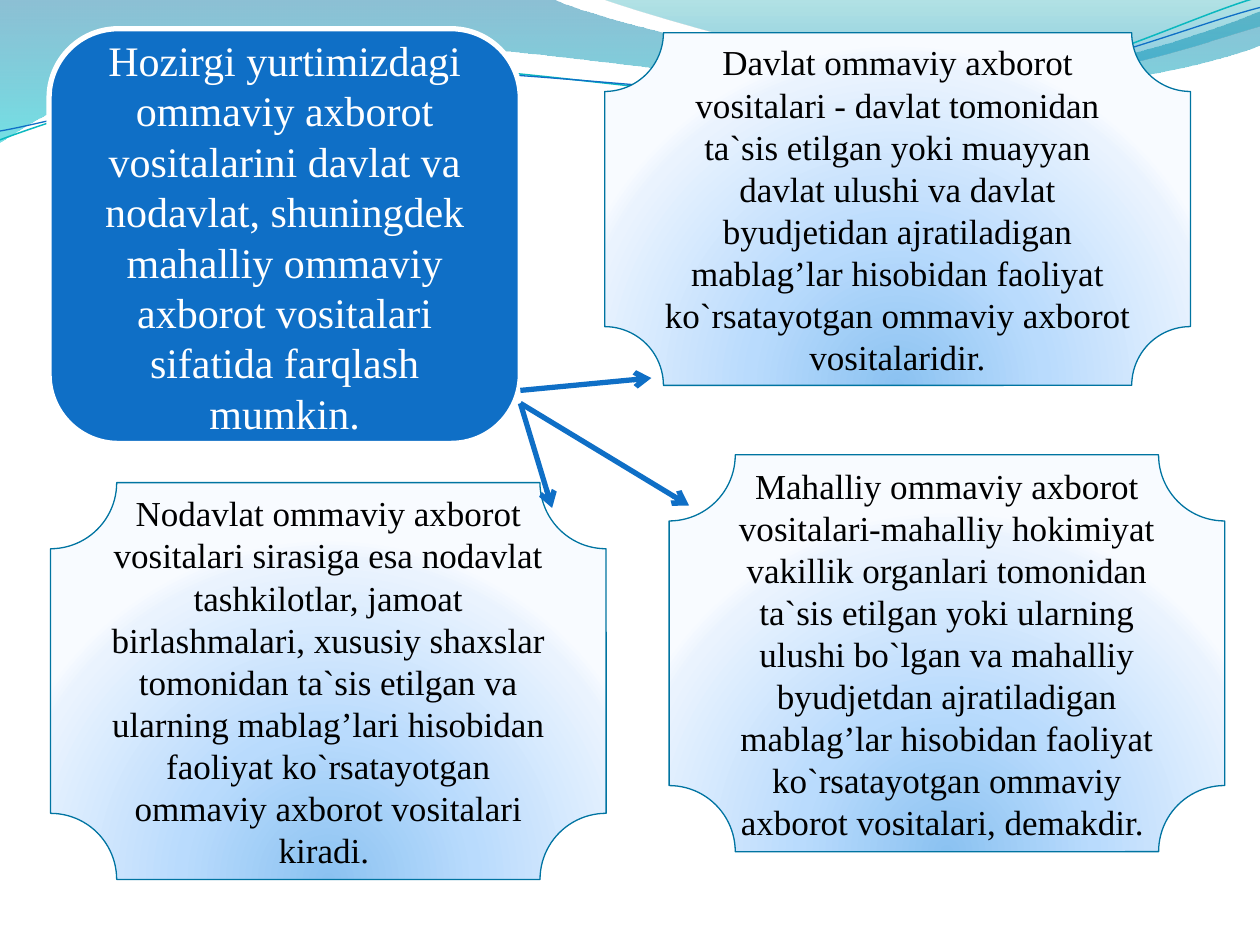
from collections import namedtuple
from math import cos, radians, sin

from lxml.etree import SubElement
from pptx import Presentation
from pptx.dml.color import RGBColor
from pptx.enum.shapes import MSO_CONNECTOR, MSO_SHAPE
from pptx.enum.text import MSO_ANCHOR, PP_ALIGN
from pptx.oxml.ns import qn
from pptx.util import Cm, Pt

Box = namedtuple("Box", "left top width height")

COLOURS = {
    "blue": "0F6FC6", "teal": "0AB8BF", "edge": "0074A1",
    "white": "FFFFFF", "black": "000000",
}
WAVE_FILLS = {
    "deep": [(0, "0074A1", 45), (100, "00C6CF", 55)],
    "light": [(0, "00A1A9", 30), (80, "008BBF", 45)],
}
PLAQUE_FILL = [(0, "8BC2F1", 100), (43, "B9DBFD", 100),
               (93, "EAF3FE", 100), (100, "F8FBFF", 100)]
GLOW = {"l": "50000", "t": "130000", "r": "50000", "b": "-30000"}
TILT = -2.7

WAVES = [
    ("deep", [(0, 0), (4.4, 0), (4.76, .17, 6.64, .63, 7.58, .63),
              (8.53, .63, 9.58, .26, 10, .09), (10, .36),
              (9.83, .44, 8.7, .76, 7.46, .75), (6.22, .75, 3.82, .28, 2.57, .34),
              (1.29, .36, .46, .83, 0, 1.13)]),
    ("light", [(4.79, 0), (5.09, .11, 6.82, .62, 7.69, .65),
               (8.56, .69, 9.61, .32, 10, .21), (10, 0)]),
]
STRANDS = [
    ("teal", .85, (4.99, .58),
     [(0, 1.11), (.48, .93, 1.58, .57, 2.77, .52),
      (3.95, .47, 5.93, .89, 7.13, .8), (8.33, .71, 9.38, .15, 9.98, -.02)]),
    ("blue", .75, (5, .59),
     [(0, 1.04), (.47, .96, 1.64, .61, 2.83, .56),
      (4.03, .51, 5.97, .84, 7.17, .75), (8.36, .67, 9.41, .21, 10, .06)]),
]

TOPIC = ("Hozirgi yurtimizdagi ommaviy axborot vositalarini davlat va nodavlat, "
         "shuningdek mahalliy ommaviy axborot vositalari sifatida farqlash mumkin.")
PLAQUES = [
    (Box(Cm(12.19), Cm(.66), Cm(11.81), Cm(7.11)),
     "Davlat ommaviy axborot vositalari - davlat tomonidan ta`sis etilgan yoki muayyan "
     "davlat ulushi va davlat byudjetidan ajratiladigan mablag’lar hisobidan faoliyat "
     "ko`rsatayotgan ommaviy axborot vositalaridir."),
    (Box(Cm(13.49), Cm(9.17), Cm(11.2), Cm(8)),
     "Mahalliy ommaviy axborot vositalari-mahalliy hokimiyat vakillik organlari tomonidan "
     "ta`sis etilgan yoki ularning ulushi bo`lgan va mahalliy byudjetdan ajratiladigan "
     "mablag’lar hisobidan faoliyat ko`rsatayotgan ommaviy axborot vositalari, demakdir. "),
    (Box(Cm(1.02), Cm(9.73), Cm(11.2), Cm(8)),
     "Nodavlat ommaviy axborot vositalari sirasiga esa nodavlat tashkilotlar, jamoat "
     "birlashmalari, xususiy shaxslar tomonidan ta`sis etilgan va ularning mablag’lari "
     "hisobidan faoliyat ko`rsatayotgan ommaviy axborot vositalari kiradi. "),
]
ARROWS = [(8.13, 13.89, 10.19), (7.87, 13.13, 7.62), (8.13, 11.13, 10.24)]


def colour(name):
    """Return the named colour."""
    return RGBColor.from_string(COLOURS[name])


def set_all(target, values):
    """Set each attribute of target from a dict of format values."""
    for name, value in values.items():
        setattr(target, name, value)


def set_line(line, name, points):
    """Give a line its colour and its width in points."""
    line.color.rgb = colour(name)
    line.width = Pt(points)


def fill_gradient(shape, stops, glow=None):
    """Fill a shape downwards, or outwards from a glow rectangle."""
    shape.fill.background()
    properties = shape.element.spPr
    empty = properties.find(qn("a:noFill"))
    gradient = properties.makeelement(qn("a:gradFill"), {"rotWithShape": "1"})
    properties.replace(empty, gradient)
    stop_list = SubElement(gradient, qn("a:gsLst"))
    for position, value, opacity in stops:
        stop = SubElement(stop_list, qn("a:gs"), pos=str(position * 1000))
        tint = SubElement(stop, qn("a:srgbClr"), val=value)
        SubElement(tint, qn("a:alpha"), val=str(opacity * 1000))
    if glow:
        circle = SubElement(gradient, qn("a:path"), {"path": "circle"})
        SubElement(circle, qn("a:fillToRect"), glow)
    else:
        SubElement(gradient, qn("a:lin"), ang="5400000", scaled="1")


def turn(point, centre, angle):
    """Turn a point clockwise about a centre by an angle in degrees."""
    x, y = point[0] - centre[0], point[1] - centre[1]
    c, s = cos(radians(angle)), sin(radians(angle))
    return centre[0] + x * c - y * s, centre[1] + x * s + y * c


def add_outline(page, box, segments, close, centre=(0, 0), rotation=0):
    """Draw lines and cubic curves given in tenths of the box width."""
    unit = box.width / 10
    pairs = [segment[i:i + 2] for segment in segments for i in range(0, len(segment), 2)]
    points = [(round(box.left + x * unit), round(box.top + y * unit))
              for x, y in (turn(pair, centre, -rotation) for pair in pairs)]
    builder = page.shapes.build_freeform(*points[0])
    builder.add_line_segments(points[1:], close=close)
    shape = builder.convert_to_shape()
    steps = iter(list(shape.element.iter(qn("a:lnTo"))))
    for segment in segments[1:]:
        step = next(steps)
        if len(segment) == 6:
            curve = step.makeelement(qn("a:cubicBezTo"), {})
            step.addprevious(curve)
            for corner in (step, next(steps), next(steps)):
                curve.append(corner[0])
                corner.getparent().remove(corner)
    shape.rotation = rotation
    shape.shadow.inherit = False
    return shape


def add_waves(page, box):
    """Draw the wavy band along the top of the box."""
    for name, segments in WAVES:
        wave = add_outline(page, box, segments, True)
        fill_gradient(wave, WAVE_FILLS[name])
        wave.line.fill.background()
    for name, width, centre, segments in STRANDS:
        strand = add_outline(page, box, segments, False, centre, TILT)
        strand.fill.background()
        set_line(strand.line, name, width)


def add_panel(page, box, kind, text, size, ink):
    """Add a preset shape with centred text."""
    panel = page.shapes.add_shape(kind, *box)
    panel.shadow.inherit = False
    set_all(panel.text_frame, {"word_wrap": True, "vertical_anchor": MSO_ANCHOR.MIDDLE})
    para = panel.text_frame.paragraphs[0]
    para.alignment = PP_ALIGN.CENTER
    span = para.add_run()
    span.text = text
    set_all(span.font, {"name": "Times New Roman", "size": Pt(size)})
    span.font.color.rgb = colour(ink)
    return panel


def add_topic(page, box):
    """Add the blue panel that states the topic."""
    topic = add_panel(page, box, MSO_SHAPE.ROUNDED_RECTANGLE, TOPIC, 24, "white")
    topic.fill.solid()
    topic.fill.fore_color.rgb = colour("blue")
    set_line(topic.line, "white", 3)


def add_plaque(page, box, text):
    """Add a glowing plaque that describes one kind of media."""
    plaque = add_panel(page, box, MSO_SHAPE.PLAQUE, text, 20, "black")
    fill_gradient(plaque, PLAQUE_FILL, GLOW)
    set_line(plaque.line, "edge", .75)


def add_arrow(page, start, end):
    """Add an arrow from start to end."""
    arrow = page.shapes.add_connector(MSO_CONNECTOR.STRAIGHT, *start, *end)
    set_line(arrow.line, "blue", 3)
    properties = arrow.element.spPr
    SubElement(properties.find(qn("a:ln")), qn("a:tailEnd"), type="arrow")
    SubElement(properties, qn("a:effectLst"))


def main():
    """Build the slide and save the deck."""
    deck = Presentation()
    set_all(deck, {"slide_width": Cm(25.4), "slide_height": Cm(19.05)})
    page = deck.slides.add_slide(deck.slide_layouts[6])
    add_waves(page, Box(0, 0, deck.slide_width, Cm(2.9)))
    topic_box = Box(Cm(.99), Cm(.58), Cm(9.5), Cm(8.36))
    add_topic(page, topic_box)
    for box, text in PLAQUES:
        add_plaque(page, box, text)
    for start_y, end_x, end_y in ARROWS:
        start = (topic_box.left + topic_box.width, Cm(start_y))
        add_arrow(page, start, (Cm(end_x), Cm(end_y)))
    deck.save("out.pptx")


if __name__ == "__main__":
    main()
